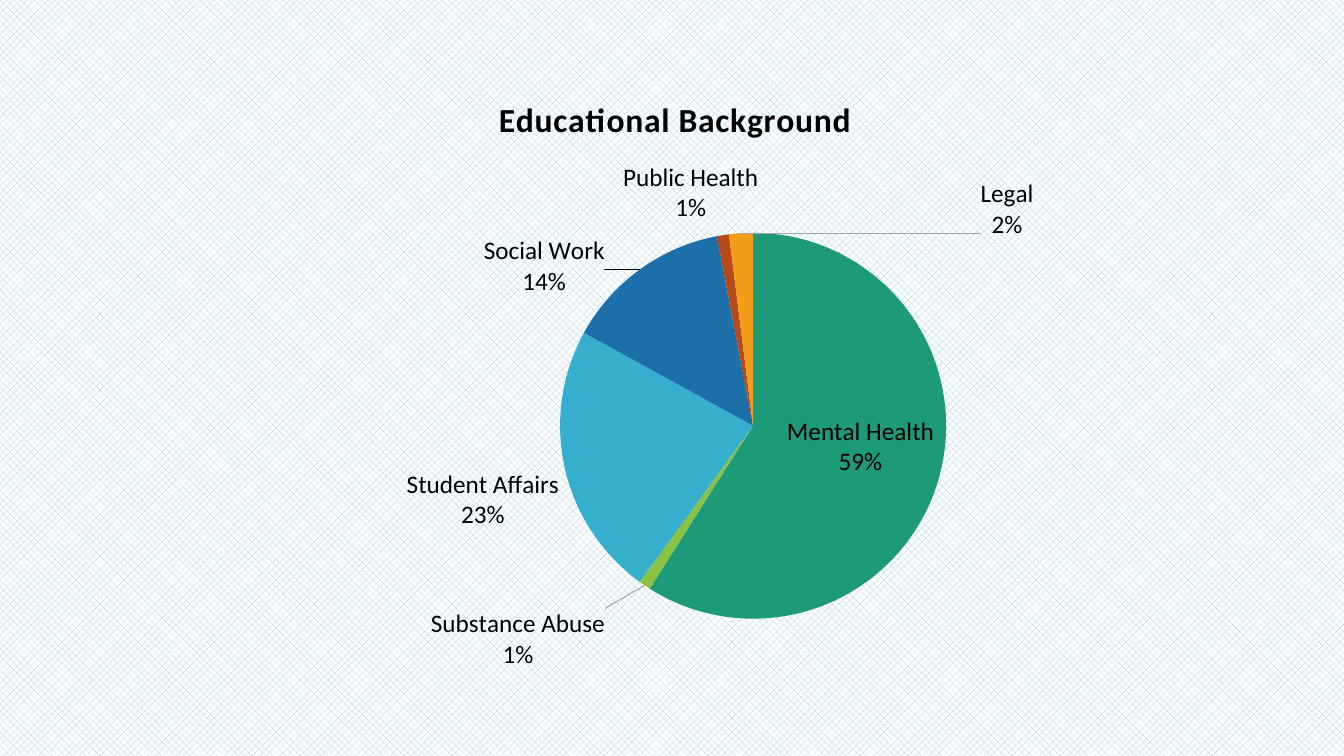
from lxml.etree import SubElement
from pptx import Presentation
from pptx.chart.data import CategoryChartData
from pptx.dml.color import RGBColor
from pptx.enum.chart import XL_CHART_TYPE, XL_LABEL_POSITION
from pptx.enum.dml import MSO_PATTERN
from pptx.oxml import parse_xml
from pptx.oxml.ns import nsdecls, qn
from pptx.util import Inches, Pt

COLORS = {
    "text": "000000", "hatch": "94C8ED", "paper": "FFFFFF", "leader": "A6A6A6",
}
BACKGROUNDS = {
    "Mental Health": (59, "1D9A78"),
    "Substance Abuse": (1, "8BC145"),
    "Student Affairs": (23, "36AFCE"),
    "Social Work": (14, "1D6FA9"),
    "Public Health": (1, "B74919"),
    "Legal": (2, "F19D19"),
}
LABEL_OFFSETS = {
    "Substance Abuse": (-0.03, 0.03),
    "Public Health": (0.03, -0.01),
    "Legal": (0.22, 0.02),
}


def rgb(value):
    return RGBColor.from_string(value)


def format_font(font, size, bold=False, color=COLORS["text"], name="Calibri"):
    font.size = Pt(size)
    font.bold = bold
    font.name = name
    font.color.rgb = rgb(color)


def write_text(text_frame, text, spacing=0, **style):
    text_frame.text = text
    run = text_frame.paragraphs[0].runs[0]
    format_font(run.font, **style)
    run.font._element.set("spc", str(spacing))


def make_layout(**values):
    layout = parse_xml(f"<c:layout {nsdecls('c')}/>")
    manual = SubElement(layout, qn("c:manualLayout"))
    for tag, value in values.items():
        SubElement(manual, qn(f"c:{tag}")).set("val", str(value))
    return layout


class SlideBuilder:
    def __init__(self, presentation):
        self.slide = presentation.slides.add_slide(presentation.slide_layouts[6])

    def background(self):
        fill = self.slide.background.fill
        fill.patterned()
        fill.pattern = MSO_PATTERN.PERCENT_50
        fill.fore_color.rgb = rgb(COLORS["hatch"])
        fill.back_color.rgb = rgb(COLORS["paper"])

    def pie(self, title, left, top, width, height):
        data = CategoryChartData()
        data.categories = list(BACKGROUNDS)
        data.add_series("Series 1", [value for value, _ in BACKGROUNDS.values()])
        chart = self.slide.shapes.add_chart(
            XL_CHART_TYPE.PIE, Inches(left), Inches(top),
            Inches(width), Inches(height), data).chart
        format_font(chart.font, size=10)
        chart.has_legend = False
        chart.has_title = True
        write_text(chart.chart_title.text_frame, title, size=24, bold=True, spacing=50)
        chart.chart_title.include_in_layout = False

        plot_area = chart._chartSpace.chart.plotArea
        for old_layout in plot_area.findall(qn("c:layout")):
            plot_area.remove(old_layout)
        plot_area.insert(0, make_layout(
            layoutTarget="inner", xMode="edge", yMode="edge",
            x=0.405, y=0.262, w=0.319, h=0.635))

        plot = chart.plots[0]
        plot.vary_by_categories = True
        series = plot.series[0]
        self.slice_labels(series)
        for index, (category, (_, color)) in enumerate(BACKGROUNDS.items()):
            point = series.points[index]
            point.format.fill.solid()
            point.format.fill.fore_color.rgb = rgb(color)
            if category in LABEL_OFFSETS:
                self.moved_label(point, *LABEL_OFFSETS[category])

    def slice_labels(self, series):
        labels = series.data_labels
        format_font(labels.font, size=18)
        labels.position = XL_LABEL_POSITION.BEST_FIT
        labels.show_value = False
        labels.show_category_name = True
        labels.show_percentage = True
        element = labels._element
        for tag in ("c:showLeaderLines", "c:leaderLines"):
            for old in element.findall(qn(tag)):
                element.remove(old)
        SubElement(element, qn("c:showLeaderLines")).set("val", "1")
        element.append(parse_xml(
            f'<c:leaderLines {nsdecls("c", "a")}><c:spPr><a:ln w="9525"><a:solidFill>'
            f'<a:srgbClr val="{COLORS["leader"]}"/></a:solidFill></a:ln></c:spPr>'
            '</c:leaderLines>'))

    def moved_label(self, point, x, y):
        label = point.data_label
        format_font(label.font, size=18)
        label.position = XL_LABEL_POSITION.BEST_FIT
        element = label._get_or_add_dLbl()
        element.insert(1, make_layout(x=x, y=y))
        for tag, shown in (("showVal", 0), ("showCatName", 1), ("showPercent", 1)):
            element.find(qn(f"c:{tag}")).set("val", str(shown))


def main():
    presentation = Presentation()
    presentation.slide_width = Inches(13.33)
    presentation.slide_height = Inches(7.5)
    builder = SlideBuilder(presentation)
    builder.background()
    builder.pie("Educational Background", 0.69, 0.73, 12.01, 6.03)
    presentation.save("out.pptx")


if __name__ == "__main__":
    main()
